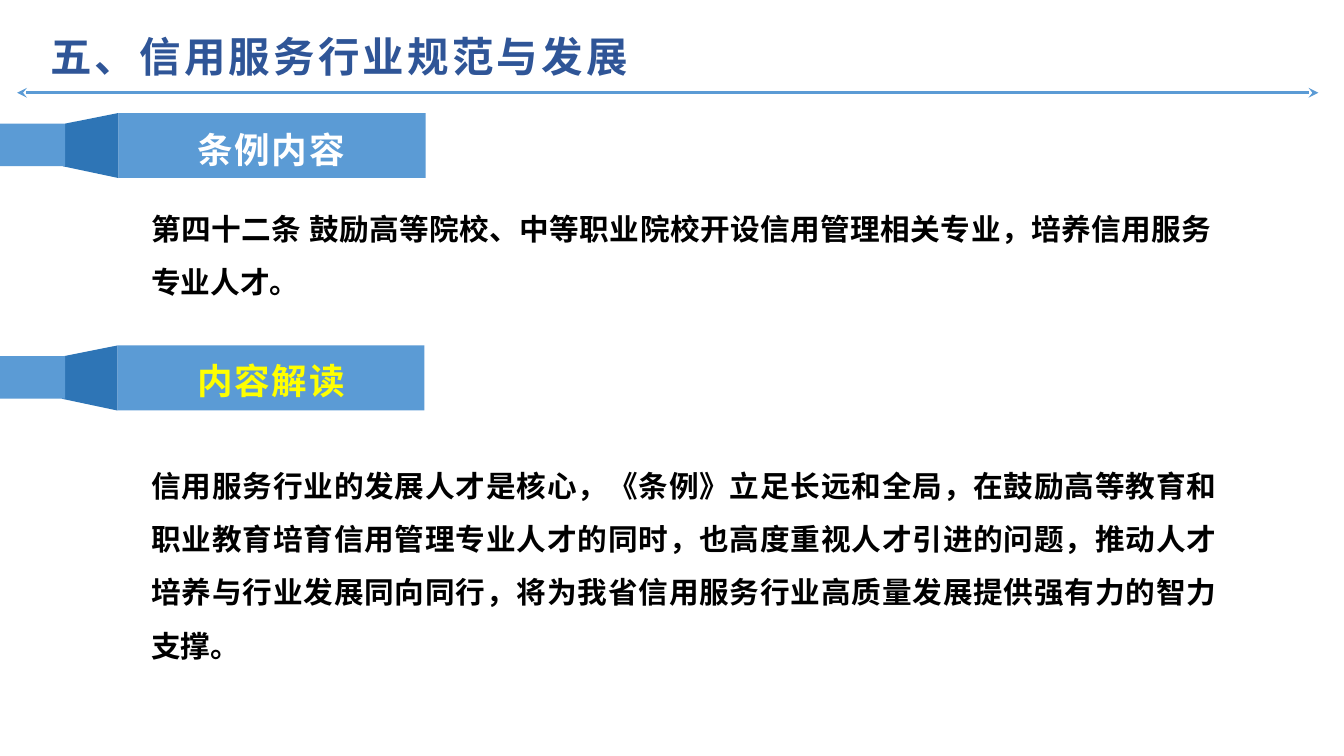
from lxml.etree import SubElement
from pptx import Presentation
from pptx.dml.color import RGBColor
from pptx.enum.shapes import MSO_CONNECTOR as Connector, MSO_SHAPE as Preset
from pptx.enum.text import MSO_AUTO_SIZE as AutoSize, PP_ALIGN as Align
from pptx.oxml.ns import qn
from pptx.util import Inches, Pt

FONT = "Noto Sans CJK SC"
COLORS = {
    "title": "2F5597",
    "ribbon": "5B9BD5",
    "fold": "2E75B6",
    "white": "FFFFFF",
    "yellow": "FFFF00",
    "black": "000000",
}
TITLE = "五、信用服务行业规范与发展"
SECTIONS = [
    {
        "heading": "条例内容", "color": "white",
        "ribbon": (1.11, 1.06), "heading_top": 0.95,
        "body": "第四十二条 鼓励高等院校、中等职业院校开设信用管理相关专业，培养信用服务专业人才。",
        "body_box": (1.32, 1.76, 10.14, 1.11),
    },
    {
        "heading": "内容解读", "color": "yellow",
        "ribbon": (1.1, 3.24), "heading_top": 3.12,
        "body": "信用服务行业的发展人才是核心，《条例》立足长远和全局，"
                "在鼓励高等教育和职业教育培育信用管理专业人才的同时，"
                "也高度重视人才引进的问题，推动人才培养与行业发展同向同行，"
                "将为我省信用服务行业高质量发展提供强有力的智力支撑。",
        "body_box": (1.32, 4.17, 10.18, 2.12),
    },
]
BAND_WIDTH, BAND_HEIGHT = 2.88, 0.61
TAIL_WIDTH, TAIL_HEIGHT, TAIL_DROP = 0.61, 0.4, 0.1
FOLD_WIDTH = 0.52


def rgb(name):
    return RGBColor.from_string(COLORS[name])


def add_text(shapes, text, box, *, size, color, align=Align.LEFT,
             spacing=0, insets=(0.1, 0.05)):
    text_box = shapes.add_textbox(*map(Inches, box))
    frame = text_box.text_frame
    frame.word_wrap = True
    frame.auto_size = AutoSize.SHAPE_TO_FIT_TEXT
    frame.margin_left = frame.margin_right = Inches(insets[0])
    frame.margin_top = frame.margin_bottom = Inches(insets[1])
    paragraph = frame.paragraphs[0]
    paragraph.alignment = align
    paragraph.line_spacing = 1.5
    run = paragraph.add_run()
    run.text = text
    font = run.font
    font.name, font.size, font.bold = FONT, Pt(size), True
    font.color.rgb = rgb(color)
    properties = run._r.get_or_add_rPr()
    SubElement(properties, qn("a:ea")).set("typeface", FONT)
    if spacing:
        properties.set("spc", str(round(spacing * 100)))


def paint(shape, color):
    shape.shadow.inherit = False
    shape.fill.solid()
    shape.fill.fore_color.rgb = rgb(color)
    shape.line.fill.background()


def add_ribbon(shapes, left, top):
    """Draw the heading band, its folded side and the tail at the slide edge."""
    band = shapes.add_shape(Preset.RECTANGLE, *map(
        Inches, (left, top, BAND_WIDTH, BAND_HEIGHT)))
    paint(band, "ribbon")

    tail_top = top + TAIL_DROP
    fold_left = left - FOLD_WIDTH
    corners = [
        (fold_left, tail_top + TAIL_HEIGHT),
        (fold_left + 0.02, tail_top),
        (left, top),
        (left, top + BAND_HEIGHT),
    ]
    points = [(Inches(x), Inches(y)) for x, y in corners]
    builder = shapes.build_freeform(*points[0])
    builder.add_line_segments(points[1:], close=True)
    paint(builder.convert_to_shape(), "fold")

    tail = shapes.add_shape(Preset.RECTANGLE, *map(
        Inches, (0, tail_top, TAIL_WIDTH, TAIL_HEIGHT)))
    paint(tail, "ribbon")


def add_title_rule(shapes):
    rule = shapes.add_connector(Connector.STRAIGHT, *map(
        Inches, (0.16, 0.87, 12.36, 0.87)))
    rule.line.color.rgb = rgb("ribbon")
    rule.line.width = Pt(2.25)
    line = rule.line._get_or_add_ln()
    for end in ("a:headEnd", "a:tailEnd"):
        SubElement(line, qn(end)).set("type", "stealth")
    SubElement(rule._element.spPr, qn("a:effectLst"))


def main():
    presentation = Presentation()
    presentation.slide_width = Inches(12.6)
    presentation.slide_height = Inches(7.09)
    slide = presentation.slides.add_slide(presentation.slide_layouts[6])
    shapes = slide.shapes

    add_text(shapes, TITLE, (0.42, 0.03, 11.68, 0.76), size=28, color="title",
             spacing=2.2, insets=(0.05, 0.03))
    add_title_rule(shapes)
    for section in SECTIONS:
        group = shapes.add_group_shape()
        add_ribbon(group.shapes, *section["ribbon"])
        add_text(group.shapes, section["heading"],
                 (1.69, section["heading_top"], 1.7, 0.71), size=24,
                 color=section["color"], align=Align.CENTER, spacing=1.2)
        add_text(shapes, section["body"], section["body_box"], size=20,
                 color="black", align=Align.JUSTIFY)

    presentation.save("out.pptx")


if __name__ == "__main__":
    main()
